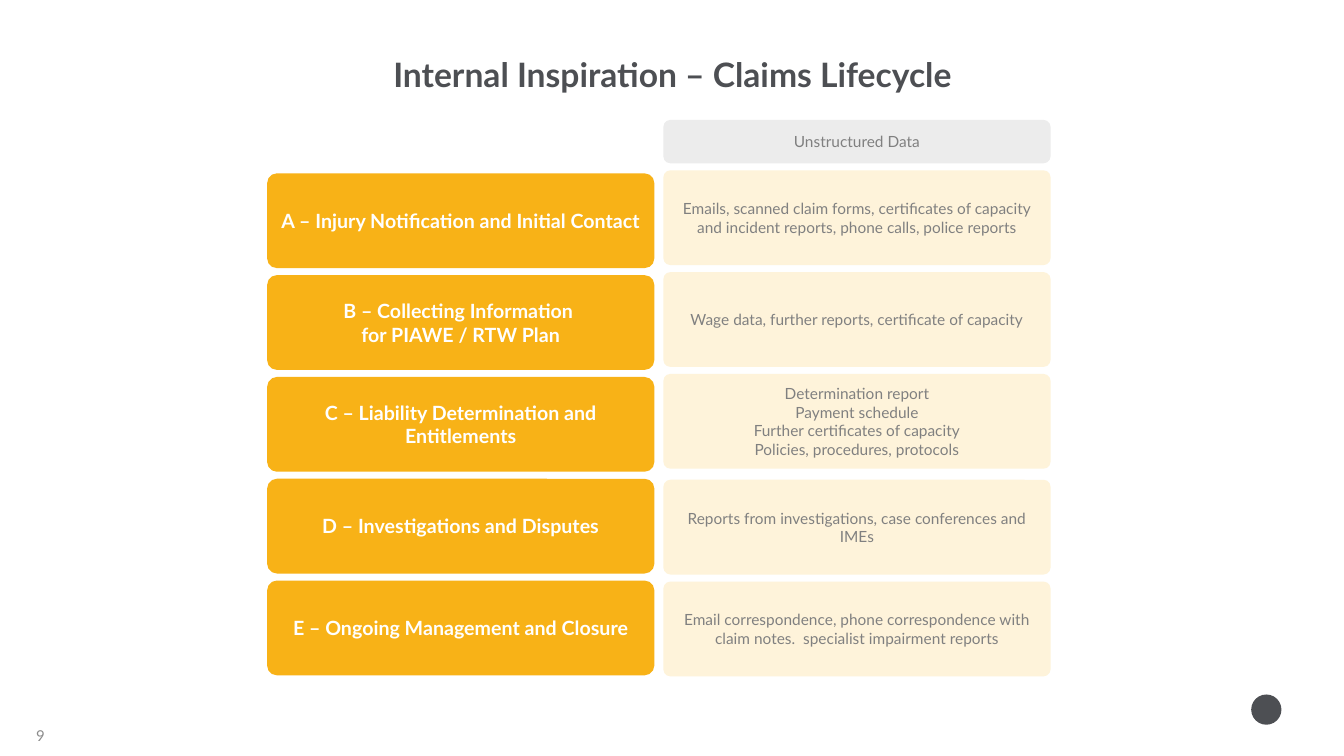
from dataclasses import dataclass

from pptx import Presentation
from pptx.dml.color import RGBColor
from pptx.enum.shapes import MSO_SHAPE
from pptx.enum.text import MSO_ANCHOR, PP_ALIGN
from pptx.util import Inches, Pt

ROUND = MSO_SHAPE.ROUNDED_RECTANGLE
OVAL = MSO_SHAPE.OVAL
TOP, MIDDLE = MSO_ANCHOR.TOP, MSO_ANCHOR.MIDDLE
LEFT, CENTER = PP_ALIGN.LEFT, PP_ALIGN.CENTER

GOLD, CREAM, PALE = "F8B217", "FEF3DA", "ECECEC"
DARK, GREY, MUTED, WHITE = "4D4F53", "808080", "8C8C8C", "FFFFFF"

STAGE_X, DATA_X = 2.65, 6.58
CARD_W, CARD_H = 3.84, 0.94
STAGE_TOP, PITCH = 1.72, 1.01


@dataclass
class Style:
    font: dict
    color: str
    align: PP_ALIGN = CENTER


@dataclass
class Stage:
    name: str
    data: str
    data_y: float


TITLE = Style({"name": "Lato", "size": Pt(24), "bold": True}, DARK)
HEAD = Style({"name": "Lato", "size": Pt(14), "bold": True}, WHITE)
BODY = Style({"name": "Lato", "size": Pt(11), "bold": False}, GREY)
PAGE = Style({"name": "Lato", "size": Pt(10.7), "bold": False}, MUTED, LEFT)

STAGES = [
    Stage("A – Injury Notification and Initial Contact",
          "Emails, scanned claim forms, certificates of capacity "
          "and incident reports, phone calls, police reports", 1.69),
    Stage("B – Collecting Information \vfor PIAWE / RTW Plan",
          "Wage data, further reports, certificate of capacity", 2.7),
    Stage("C – Liability Determination and Entitlements",
          "Determination report\nPayment schedule\n"
          "Further certificates of capacity\nPolicies, procedures, protocols", 3.71),
    Stage("D – Investigations and Disputes",
          "Reports from investigations, case conferences and IMEs", 4.76),
    Stage("E – Ongoing Management and Closure",
          "Email correspondence, phone correspondence with claim notes.  "
          "specialist impairment reports", 5.77),
]


def rgb(color: str) -> RGBColor:
    return RGBColor.from_string(color)


def write(shape, text: str, style: Style, anchor=MIDDLE) -> None:
    frame = shape.text_frame
    frame.word_wrap = True
    frame.vertical_anchor = anchor
    frame.text = text
    for para in frame.paragraphs:
        para.alignment = style.align
        for font in [para.font] + [run.font for run in para.runs]:
            for key, value in style.font.items():
                setattr(font, key, value)
            font.color.rgb = rgb(style.color)


def add_form(slide, kind: MSO_SHAPE, box: tuple, fill: str):
    """Add a flat filled shape without an outline."""
    form = slide.shapes.add_shape(kind, *map(Inches, box))
    form.shadow.inherit = False
    form.fill.solid()
    form.fill.fore_color.rgb = rgb(fill)
    form.line.fill.background()
    return form


def add_card(slide, box: tuple, fill: str, bend: float, text: str, style: Style) -> None:
    card = add_form(slide, ROUND, box, fill)
    card.adjustments[0] = bend
    write(card, text, style)


def add_title(slide, text: str) -> None:
    title = slide.shapes.add_textbox(*map(Inches, (0.67, 0.58, 12, 1.25)))
    write(title, text, TITLE, TOP)
    frame = title.text_frame
    for side in ("left", "right", "top", "bottom"):
        setattr(frame, f"margin_{side}", 0)
    frame.paragraphs[0].line_spacing = 0.9


def main() -> None:
    deck = Presentation()
    deck.slide_width, deck.slide_height = Inches(13.33), Inches(7.5)
    slide = deck.slides.add_slide(deck.slide_layouts[6])

    add_form(slide, OVAL, (12.41, 6.89, 0.3, 0.3), DARK)
    add_title(slide, "Internal Inspiration – Claims Lifecycle")
    page = slide.shapes.add_textbox(*map(Inches, (0.26, 7.17, 3.11, 0.25)))
    write(page, "9", PAGE)

    for row, stage in enumerate(STAGES):
        top = STAGE_TOP + row * PITCH
        add_card(slide, (STAGE_X, top, CARD_W, CARD_H), GOLD, 0.103, stage.name, HEAD)
        add_card(slide, (DATA_X, stage.data_y, CARD_W, CARD_H), CREAM, 0.074,
                 stage.data, BODY)
    add_card(slide, (DATA_X, 1.19, CARD_W, 0.43), PALE, 0.16, "Unstructured Data", BODY)

    deck.save("out.pptx")


if __name__ == "__main__":
    main()
